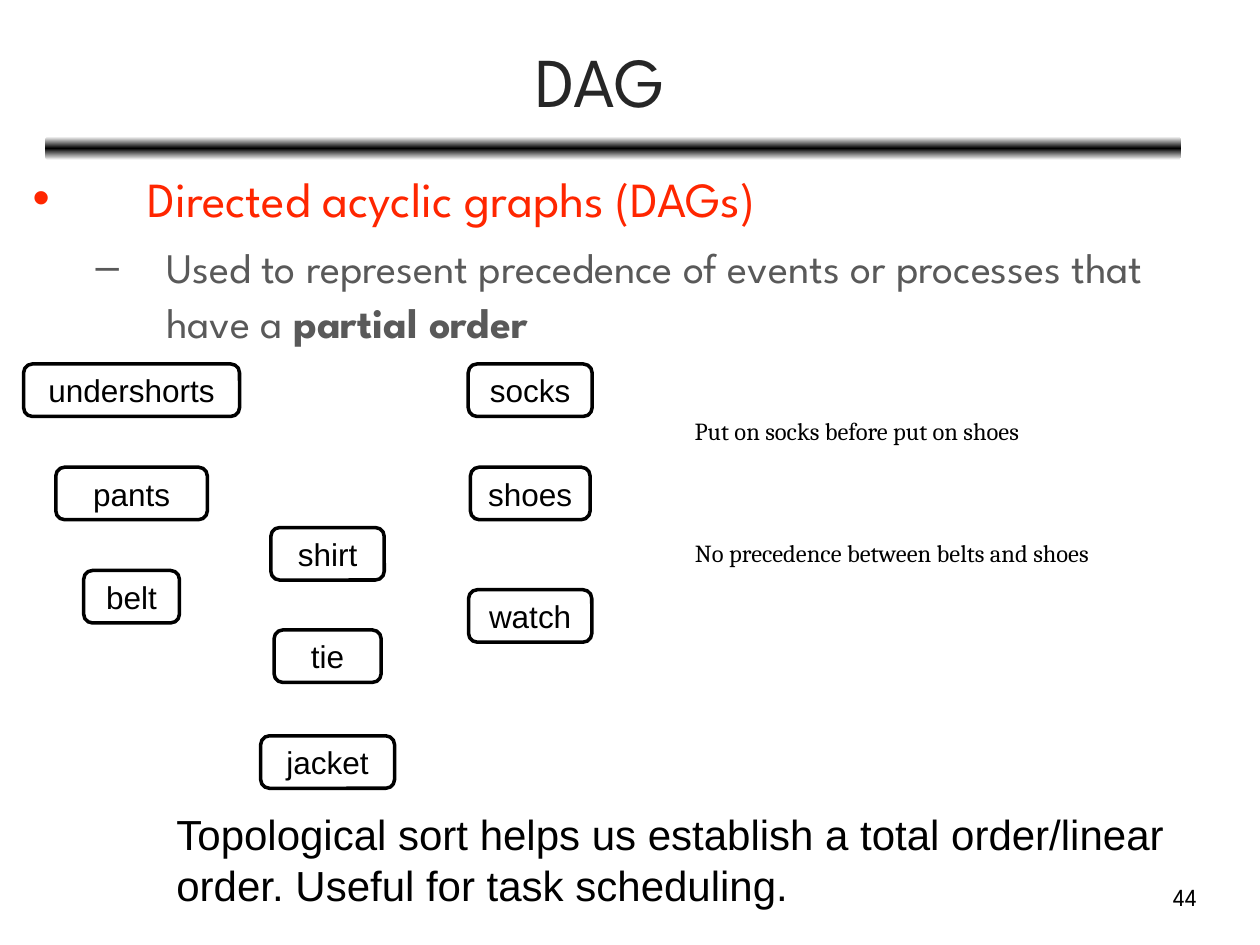
from copy import deepcopy
from dataclasses import dataclass

from pptx import Presentation
from pptx.dml.color import RGBColor as RGB
from pptx.enum.shapes import MSO_SHAPE as Shape
from pptx.enum.text import MSO_ANCHOR as Anchor, MSO_AUTO_SIZE as Fit, PP_ALIGN as Align
from pptx.oxml.ns import qn
from pptx.util import Pt


@dataclass(frozen=True)
class Theme:
    head: str = "League Spartan"
    sans: str = "Arial"
    serif: str = "Cambria"
    black: RGB = RGB(0, 0, 0)
    white: RGB = RGB(255, 255, 255)
    dark: RGB = RGB(0x26, 0x26, 0x26)
    red: RGB = RGB(0xFF, 0x26, 0x00)
    gray: RGB = RGB(0x59, 0x59, 0x59)
    title: int = 40
    topic: int = 28
    text: int = 24
    label: int = 18
    small: int = 14


class Page:
    def __init__(self, slide, theme):
        self.slide = slide
        self.theme = theme

    def place(self, item, x, y, w, h):
        item.left, item.top, item.width, item.height = map(Pt, (x, y, w, h))

    def frame(self, item, pad=0, wrap=True, anchor=Anchor.TOP):
        box = item.text_frame
        box.auto_size = Fit.NONE
        box.word_wrap = wrap
        box.vertical_anchor = anchor
        box.margin_left = box.margin_top = box.margin_right = box.margin_bottom = Pt(pad)
        return box

    def style(self, par, font, size, color, align=Align.LEFT):
        par.alignment = align
        for run in par.runs:
            run.font.name = font
            run.font.size = Pt(size)
            run.font.color.rgb = color

    def title(self, text, *spot):
        item = self.slide.shapes.title
        self.place(item, *spot)
        box = self.frame(item, anchor=Anchor.MIDDLE)
        box.text = text
        self.style(box.paragraphs[0], self.theme.head, self.theme.title,
                   self.theme.dark, Align.CENTER)

    def rule(self, *spot):
        """Draw a bar that fades from black to white above and below."""
        bar = self.slide.shapes.add_shape(Shape.ROUNDED_RECTANGLE, *map(Pt, spot))
        bar.shadow.inherit = False
        bar.line.fill.background()
        bar.fill.gradient()
        bar.fill.gradient_angle = 90
        stops = next(bar._element.spPr.iter(qn("a:gsLst")))
        stops.append(deepcopy(stops[-1]))
        shades = (self.theme.white, self.theme.black, self.theme.white)
        for stop, place, color in zip(bar.fill.gradient_stops, (0, 0.5, 1), shades):
            stop.position = place
            stop.color.rgb = color

    def body(self, topic, point, strong, *spot):
        item = self.slide.placeholders[1]
        self.place(item, *spot)
        box = self.frame(item)
        box.text = f"{topic}\n{point}"
        first, second = box.paragraphs
        second.level = 1
        run = second.add_run()
        run.text = strong
        run.font.bold = True
        look = self.theme
        rows = ((first, look.topic, look.red, 6, 65.5, 65.5),
                (second, look.text, look.gray, 5, 76.3, 40.3))
        for par, size, color, gap, left, hang in rows:
            self.style(par, look.head, size, color)
            par.line_spacing = 1.1
            par.space_before = Pt(gap)
            props = par._p.get_or_add_pPr()
            props.set("marL", str(Pt(left)))
            props.set("indent", str(-Pt(hang)))

    def node(self, text, mid, top, wide, high=30):
        item = self.slide.shapes.add_shape(
            Shape.ROUNDED_RECTANGLE, *map(Pt, (mid - wide / 2, top, wide, high)))
        item.shadow.inherit = False
        item.fill.background()
        item.line.color.rgb = self.theme.black
        item.line.width = Pt(2)
        box = self.frame(item, wrap=False, anchor=Anchor.MIDDLE)
        box.text = text
        self.style(box.paragraphs[0], self.theme.sans, self.theme.label,
                   self.theme.black, Align.CENTER)

    def note(self, text, spot, font, size, align=Align.LEFT, pad=0, wrap=True):
        item = self.slide.shapes.add_textbox(*map(Pt, spot))
        box = self.frame(item, pad, wrap)
        box.text = text
        self.style(box.paragraphs[0], font, size, self.theme.black, align)


def main():
    deck = Presentation()
    deck.slide_width, deck.slide_height = Pt(720), Pt(540)
    look = Theme()
    page = Page(deck.slides.add_slide(deck.slide_layouts[1]), look)

    page.rule(26, 78, 649, 13.5)
    page.title("DAG", 18.7, 10, 648, 71.3)
    page.body("Directed acyclic graphs (DAGs)",
              "Used to represent precedence of events or processes that have a ",
              "partial order", 18.7, 93, 648, 399.6)

    # Each column: centre, then name, top and width of its garments
    clothes = {
        75.2: (("undershorts", 208, 123.4), ("pants", 267, 86.6), ("belt", 326, 54.7)),
        187.2: (("shirt", 301.5, 64.8), ("tie", 360, 61.2), ("jacket", 420.5, 76.5)),
        303: (("socks", 208, 70.8), ("shoes", 267, 68.4), ("watch", 337, 70.4)),
    }
    for mid, column in clothes.items():
        for name, top, wide in column:
            page.node(name, mid, top, wide)

    for text, spot in (
        ("Put on socks before put on shoes", (381, 234, 217.4, 26)),
        ("No precedence between belts and shoes", (376.6, 304, 266.4, 26)),
    ):
        page.note(text, spot, look.serif, look.small, Align.CENTER, 3.6, False)
    page.note("Topological sort helps us establish a total order/linear order. "
              "Useful for task scheduling.", (100.8, 462.3, 572.4, 55.4),
              look.sans, look.text)
    page.note("44", (516, 504, 168, 17.3), look.head, look.small, Align.RIGHT)
    deck.save("out.pptx")


if __name__ == "__main__":
    main()
